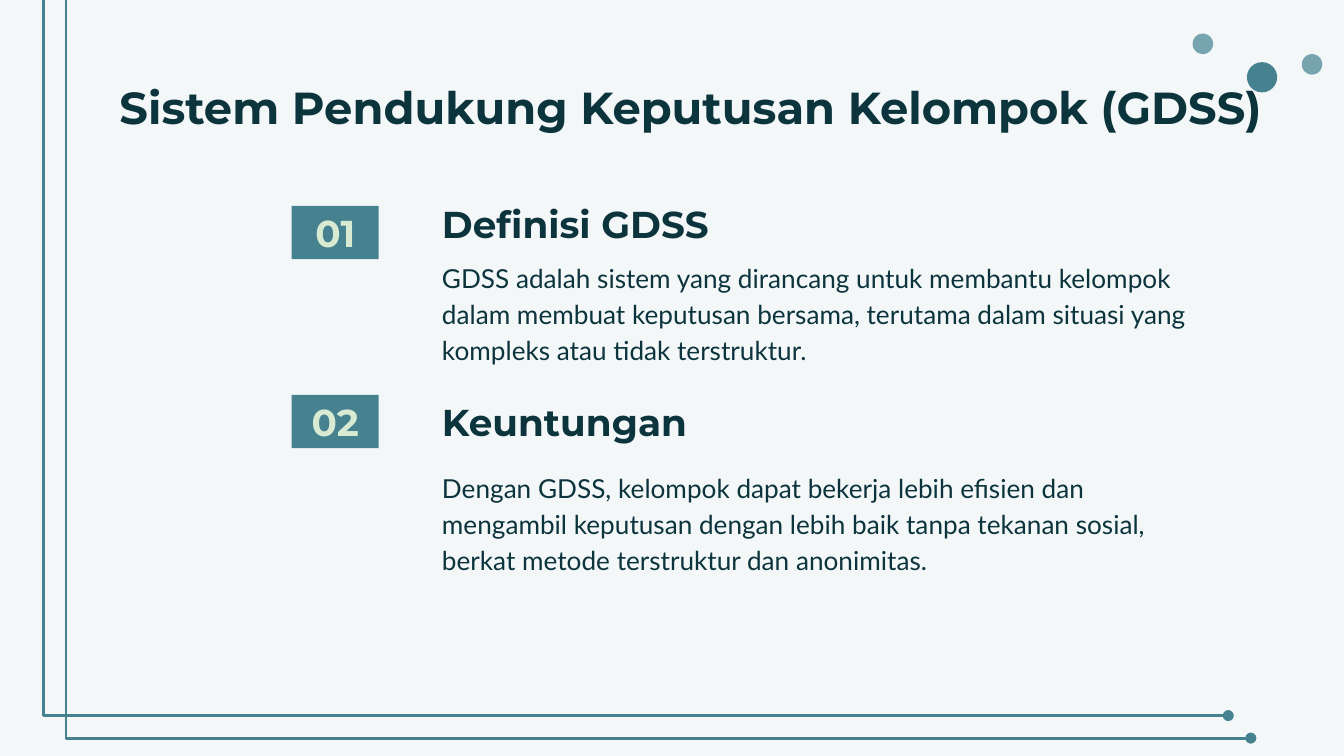
from lxml import etree
from pptx import Presentation
from pptx.dml.color import RGBColor
from pptx.enum import shapes, text
from pptx.oxml.ns import qn
from pptx.util import Pt

TEAL, LIGHT, DARK, PALE = "45818E", "76A5AF", "0C343D", "D9EAD3"
TITLE = dict(name="Montserrat", size=Pt(24), bold=True)
HEAD = dict(name="Montserrat", size=Pt(20), bold=True)
BODY = dict(name="Lato", size=Pt(14), bold=False)


def rgb(color):
    return RGBColor.from_string(color)


def write(sp, words, font, color, anchor="TOP", align="LEFT", spacing=1.0):
    tf = sp.text_frame
    frame = dict(word_wrap=True, vertical_anchor=text.MSO_ANCHOR[anchor])
    for side in ("left", "top", "right", "bottom"):
        frame["margin_" + side] = Pt(7.2)
    for key, value in frame.items():
        setattr(tf, key, value)
    p = tf.paragraphs[0]
    p.alignment = text.PP_ALIGN[align]
    p.line_spacing = spacing
    r = p.add_run()
    r.text = words
    for key, value in font.items():
        setattr(r.font, key, value)
    r.font.color.rgb = rgb(color)


prs = Presentation()
prs.slide_width, prs.slide_height = Pt(720), Pt(405)
s = prs.slides.add_slide(prs.slide_layouts[6])
s.background.fill.solid()
s.background.fill.fore_color.rgb = rgb("F3F7F8")

# Filled shapes: corner dots, then number badges
OVAL, RECT = shapes.MSO_SHAPE.OVAL, shapes.MSO_SHAPE.RECTANGLE
badges = []
for kind, x, y, w, h, color in [
    (OVAL, 668, 33.3, 16.2, 16.2, TEAL),
    (OVAL, 638.9, 18, 11, 11, LIGHT),
    (OVAL, 697.4, 29, 11, 11, LIGHT),
    (RECT, 156.3, 110.3, 46.6, 28.6, TEAL),
    (RECT, 156.3, 211.5, 46.6, 28.6, TEAL),
]:
    sp = s.shapes.add_shape(kind, Pt(x), Pt(y), Pt(w), Pt(h))
    sp.shadow.inherit = False
    sp.fill.solid()
    sp.fill.fore_color.rgb = rgb(color)
    sp.line.fill.background()
    if kind == RECT:
        badges.append(sp)

# Two parallel frame lines, each ending in a dot
for step in (0, 12.1):
    cn = s.shapes.add_connector(
        shapes.MSO_CONNECTOR.ELBOW,
        Pt(29.5 + step), Pt(-17.2 + step), Pt(658 + step), Pt(383.4 + step))
    cn.line.color.rgb = rgb(TEAL)
    cn.line.width = Pt(1.5)
    etree.SubElement(cn.line._get_or_add_ln(), qn("a:tailEnd"), type="oval")
    pr = cn._element.spPr
    etree.SubElement(pr, qn("a:effectLst"))
    guides = pr.find(qn("a:prstGeom")).get_or_add_avLst()
    etree.SubElement(guides, qn("a:gd"), name="adj1", fmla="val -1000")

# Slide title
tb = s.shapes.add_textbox(Pt(56.9), Pt(35.3), Pt(632.9), Pt(45.4))
write(tb, "Sistem Pendukung Keputusan Kelompok (GDSS)", TITLE, DARK)

# Numbered sections
sections = [
    ("Definisi GDSS", 110.3, 131, 439,
     "GDSS adalah sistem yang dirancang untuk membantu kelompok dalam membuat "
     "keputusan bersama, terutama dalam situasi yang kompleks atau tidak terstruktur."),
    ("Keuntungan", 216.5, 243.5, 419,
     "Dengan GDSS, kelompok dapat bekerja lebih efisien dan mengambil keputusan "
     "dengan lebih baik tanpa tekanan sosial, berkat metode terstruktur dan anonimitas."),
]
for n, (heading, head_y, body_y, body_w, body) in enumerate(sections):
    write(badges[n], f"{n + 1:02}", HEAD, PALE, "MIDDLE", "CENTER")
    tb = s.shapes.add_textbox(Pt(229.7), Pt(head_y), Pt(334), Pt(28.6))
    write(tb, heading, HEAD, DARK, "BOTTOM", spacing=1.15)
    tb = s.shapes.add_textbox(Pt(229.7), Pt(body_y), Pt(body_w), Pt(28.6))
    write(tb, body, BODY, DARK, spacing=1.15)

prs.save("out.pptx")
